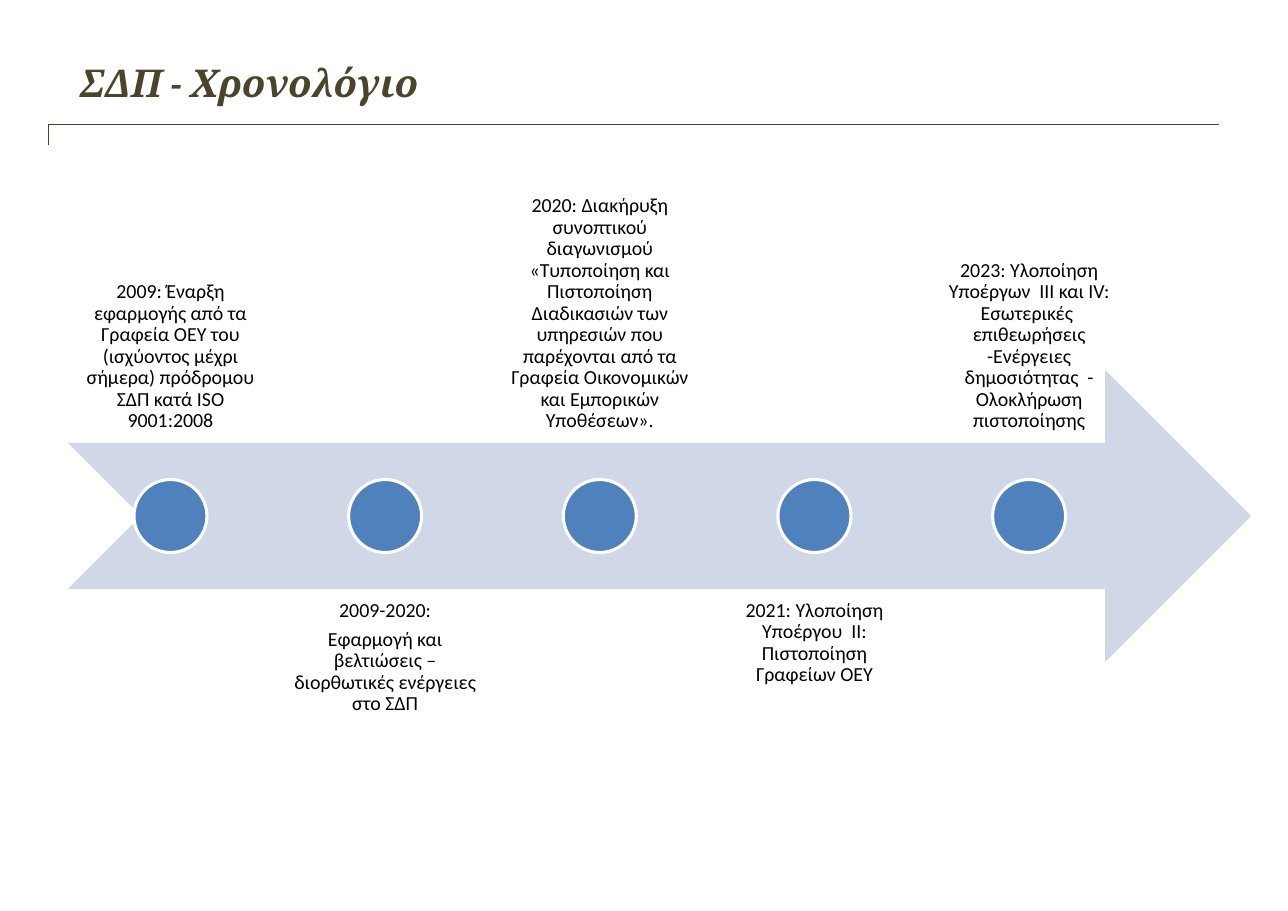
import pptx
import pptx.util
import pptx.oxml
import pptx.oxml.ns
import pptx.dml.color
import pptx.enum.shapes
import pptx.enum.text

Cm, Pt = pptx.util.Cm, pptx.util.Pt
SHAPE = pptx.enum.shapes.MSO_SHAPE
ANCHOR = pptx.enum.text.MSO_ANCHOR
ALIGN = pptx.enum.text.PP_ALIGN

# Content: captions alternate above and below the arrow
TITLE = "ΣΔΠ - Χρονολόγιο"
MILESTONES = [
    ["2009: Έναρξη εφαρμογής από τα Γραφεία ΟΕΥ του (ισχύοντος μέχρι σήμερα) "
     "πρόδρομου ΣΔΠ κατά ISO 9001:2008"],
    ["2009-2020:", "Εφαρμογή και βελτιώσεις – διορθωτικές ενέργειες στο ΣΔΠ"],
    ["2020: Διακήρυξη συνοπτικού διαγωνισμού «Τυποποίηση και Πιστοποίηση "
     "Διαδικασιών των υπηρεσιών που παρέχονται από τα Γραφεία Οικονομικών "
     "και Εμπορικών Υποθέσεων»."],
    ["2021: Υλοποίηση Υποέργου  ΙΙ: Πιστοποίηση Γραφείων ΟΕΥ"],
    ["2023: Υλοποίηση Υποέργων  ΙΙΙ και IV: Εσωτερικές  επιθεωρήσεις "
     "-Ενέργειες δημοσιότητας  - Ολοκλήρωση πιστοποίησης"],
]
COLOURS = {"olive": "4A452A", "arrow": "D0D8E8", "dot": "4F81BD",
           "white": "FFFFFF", "text": "000000"}

# Measures in centimetres
ARROW_LEFT, ARROW_TOP, ARROW_WIDTH, ARROW_HEIGHT = 1.57, 8.53, 27.28, 6.73
CAPTION_WIDTH, STEP = 4.72, 4.95
DOT = ARROW_HEIGHT / 4
ABOVE_TOP = ARROW_TOP - ARROW_HEIGHT * 3 / 4
BELOW_TOP = ARROW_TOP + ARROW_HEIGHT * 3 / 4
RULE_LEFT, RULE_RIGHT, RULE_TOP, RULE_BOTTOM = 1.12, 28.12, 2.87, 3.34


def colour(name):
    return pptx.dml.color.RGBColor.from_string(COLOURS[name])


def set_margins(frame, side, end):
    frame.margin_left = frame.margin_right = Cm(side)
    frame.margin_top = frame.margin_bottom = Cm(end)


def add_span(para, text, font, size, ink):
    span = para.add_run()
    span.text = text
    span.font.name, span.font.size = font, Pt(size)
    span.font.color.rgb = colour(ink)
    return span


def add_filled(page, kind, left, top, width, height, fill):
    shape = page.shapes.add_shape(kind, Cm(left), Cm(top), Cm(width), Cm(height))
    shape.shadow.inherit = False
    shape.fill.solid()
    shape.fill.fore_color.rgb = colour(fill)
    shape.line.fill.background()
    return shape


def add_title(page):
    box = page.shapes.title
    box.left, box.top, box.width, box.height = Cm(1.57), Cm(1.22), Cm(26.55), Cm(1.37)
    frame = box.text_frame
    frame.auto_size = pptx.enum.text.MSO_AUTO_SIZE.NONE
    frame.vertical_anchor = ANCHOR.MIDDLE
    set_margins(frame, 0.28, 0.15)
    para = frame.paragraphs[0]
    para.alignment = ALIGN.LEFT
    span = add_span(para, TITLE, "Cambria", 25, "olive")
    span.font.bold = span.font.italic = True
    # Soft shadow under the letters
    shadow = pptx.oxml.parse_xml(
        f'<a:effectLst {pptx.oxml.ns.nsdecls("a")}>'
        '<a:outerShdw blurRad="50800" dist="38100" dir="5400000">'
        '<a:srgbClr val="000000"><a:alpha val="40000"/></a:srgbClr>'
        '</a:outerShdw></a:effectLst>')
    span.font._element.find(pptx.oxml.ns.qn("a:solidFill")).addnext(shadow)


def add_rule(page):
    outline = page.shapes.build_freeform(Cm(RULE_LEFT), Cm(RULE_BOTTOM))
    outline.add_line_segments([(Cm(RULE_LEFT), Cm(RULE_TOP)),
                               (Cm(RULE_RIGHT), Cm(RULE_TOP))], close=False)
    rule = outline.convert_to_shape()
    rule.shadow.inherit = False
    rule.fill.background()
    rule.line.color.rgb = colour("olive")
    rule.line.width = Pt(1)


def add_milestone(page, index, lines):
    left = ARROW_LEFT + index * STEP
    above = index % 2 == 0
    # Caption
    box = page.shapes.add_textbox(Cm(left), Cm(ABOVE_TOP if above else BELOW_TOP),
                                  Cm(CAPTION_WIDTH), Cm(ARROW_HEIGHT))
    frame = box.text_frame
    frame.word_wrap = True
    frame.vertical_anchor = ANCHOR.BOTTOM if above else ANCHOR.TOP
    set_margins(frame, 0.25, 0.25)
    for number, line in enumerate(lines):
        para = frame.add_paragraph() if number else frame.paragraphs[0]
        para.alignment = ALIGN.CENTER
        para.line_spacing = 0.9
        para.space_after = Pt(5)
        add_span(para, line, "Calibri", 13, "text")
    # Dot
    dot = add_filled(page, SHAPE.OVAL, left + (CAPTION_WIDTH - DOT) / 2,
                     ARROW_TOP + (ARROW_HEIGHT - DOT) / 2, DOT, DOT, "dot")
    dot.line.color.rgb = colour("white")
    dot.line.width = Pt(2)


def main():
    deck = pptx.Presentation()
    deck.slide_width, deck.slide_height = Cm(29.7), Cm(21)
    page = deck.slides.add_slide(deck.slide_layouts[5])
    add_rule(page)
    add_title(page)
    add_filled(page, SHAPE.NOTCHED_RIGHT_ARROW, ARROW_LEFT, ARROW_TOP,
               ARROW_WIDTH, ARROW_HEIGHT, "arrow")
    for index, lines in enumerate(MILESTONES):
        add_milestone(page, index, lines)
    deck.save("out.pptx")


if __name__ == "__main__":
    main()
